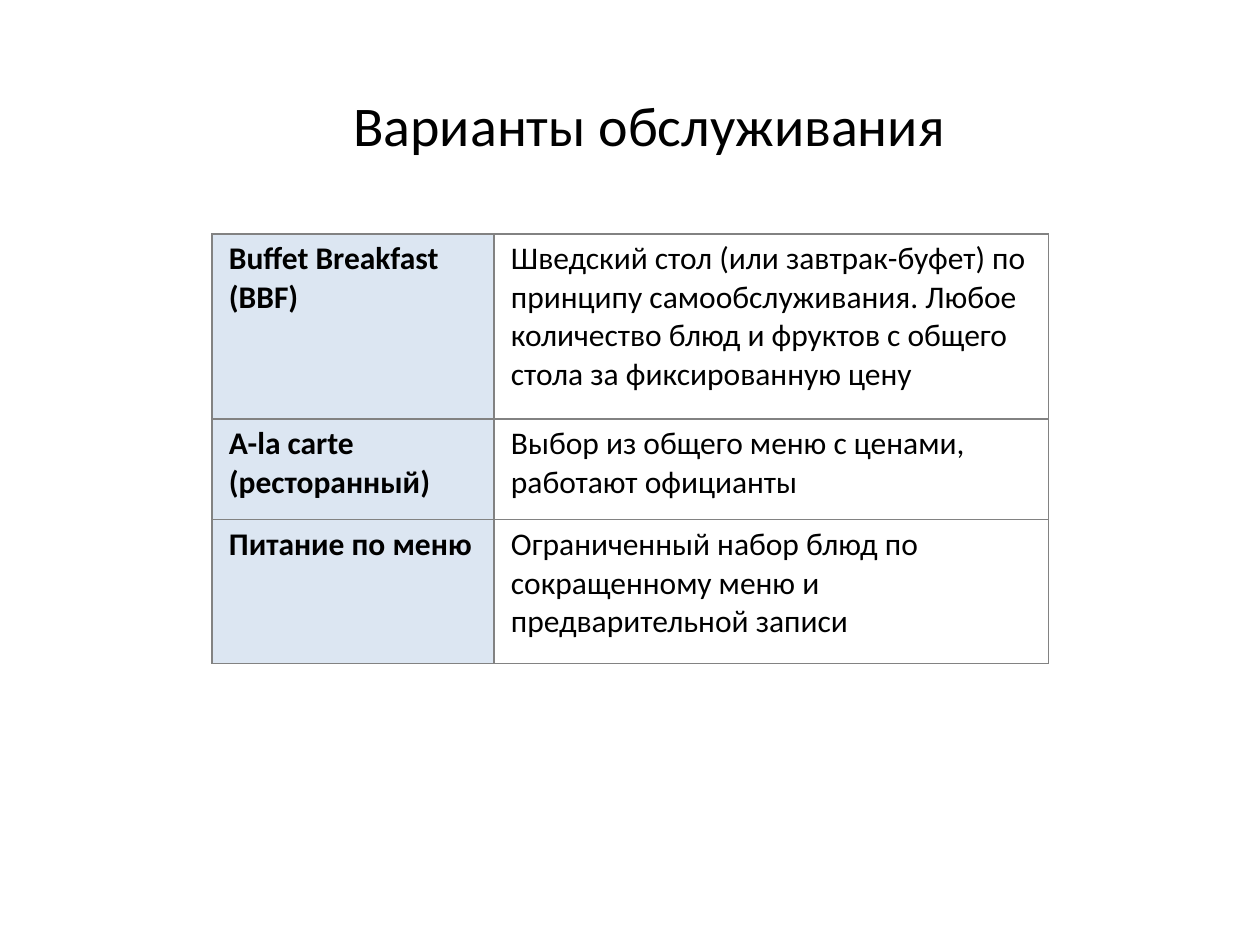
from dataclasses import dataclass

from lxml.etree import SubElement
from pptx import Presentation
from pptx.dml.color import RGBColor
from pptx.enum.text import MSO_ANCHOR, PP_ALIGN
from pptx.oxml.ns import qn
from pptx.util import Emu, Pt

EMU_PER_PX = 914400 // 126
FONT = "Calibri"
BLACK, WHITE, PALE_BLUE, GRAY = "000000", "FFFFFF", "DCE6F2", "828282"
TABLE_LEFT, TABLE_TOP = 212, 234
COLUMN_WIDTHS = (282, 555)


@dataclass(frozen=True)
class ServiceOption:
    name: str
    description: str
    height: int


OPTIONS = (
    ServiceOption(
        "Buffet Breakfast (BBF)",
        "Шведский стол (или завтрак-буфет) по принципу самообслуживания. "
        "Любое количество блюд и фруктов с общего стола за фиксированную цену",
        185,
    ),
    ServiceOption(
        "A-la carte (ресторанный)",
        "Выбор из общего меню с ценами, работают официанты",
        101,
    ),
    ServiceOption(
        "Питание по меню",
        "Ограниченный набор блюд по сокращенному меню и предварительной записи",
        144,
    ),
)


def px(length: int) -> Emu:
    return Emu(length * EMU_PER_PX)


def color(value: str) -> RGBColor:
    return RGBColor.from_string(value)


def write(frame, text: str, *, size: int, bold: bool = False, align=PP_ALIGN.LEFT) -> None:
    para = frame.paragraphs[0]
    para.alignment = align
    span = para.add_run()
    span.text = text
    span.font.name = FONT
    span.font.size = Pt(size)
    span.font.bold = bold
    span.font.color.rgb = color(BLACK)


def add_borders(cell, line_color: str, width: float) -> None:
    properties = cell._tc.get_or_add_tcPr()
    for position, side in enumerate(("a:lnL", "a:lnR", "a:lnT", "a:lnB")):
        line = SubElement(properties, qn(side), w=str(Pt(width)))
        fill = SubElement(line, qn("a:solidFill"))
        SubElement(fill, qn("a:srgbClr"), val=line_color)
        properties.insert(position, line)


def format_cell(cell, text: str, *, fill: str, bold: bool) -> None:
    cell.margin_left, cell.margin_top = px(17), px(6)
    cell.margin_right, cell.margin_bottom = px(9), px(8)
    cell.vertical_anchor = MSO_ANCHOR.TOP
    cell.fill.solid()
    cell.fill.fore_color.rgb = color(fill)
    add_borders(cell, GRAY, 0.75)
    write(cell.text_frame, text, size=18, bold=bold)


def add_title(page, text: str) -> None:
    box = page.shapes.title
    box.left, box.top, box.width, box.height = px(273), px(76), px(753), px(97)
    box.text_frame.word_wrap = True
    box.text_frame.vertical_anchor = MSO_ANCHOR.MIDDLE
    write(box.text_frame, text, size=32, align=PP_ALIGN.CENTER)


def add_options_table(page, options: tuple[ServiceOption, ...]) -> None:
    total_height = sum(option.height for option in options)
    table = page.shapes.add_table(
        len(options), len(COLUMN_WIDTHS),
        px(TABLE_LEFT), px(TABLE_TOP), px(sum(COLUMN_WIDTHS)), px(total_height),
    ).table
    table.first_row = False
    table.horz_banding = False
    for column, width in zip(table.columns, COLUMN_WIDTHS):
        column.width = px(width)
    for row, option in zip(table.rows, options):
        row.height = px(option.height)
        format_cell(row.cells[0], option.name, fill=PALE_BLUE, bold=True)
        format_cell(row.cells[1], option.description, fill=WHITE, bold=False)


def main() -> None:
    deck = Presentation()
    deck.slide_width, deck.slide_height = px(1260), px(945)
    page = deck.slides.add_slide(deck.slide_layouts[5])
    page.background.fill.solid()
    page.background.fill.fore_color.rgb = color(WHITE)
    add_title(page, "Варианты обслуживания")
    add_options_table(page, OPTIONS)
    deck.save("out.pptx")


if __name__ == "__main__":
    main()
